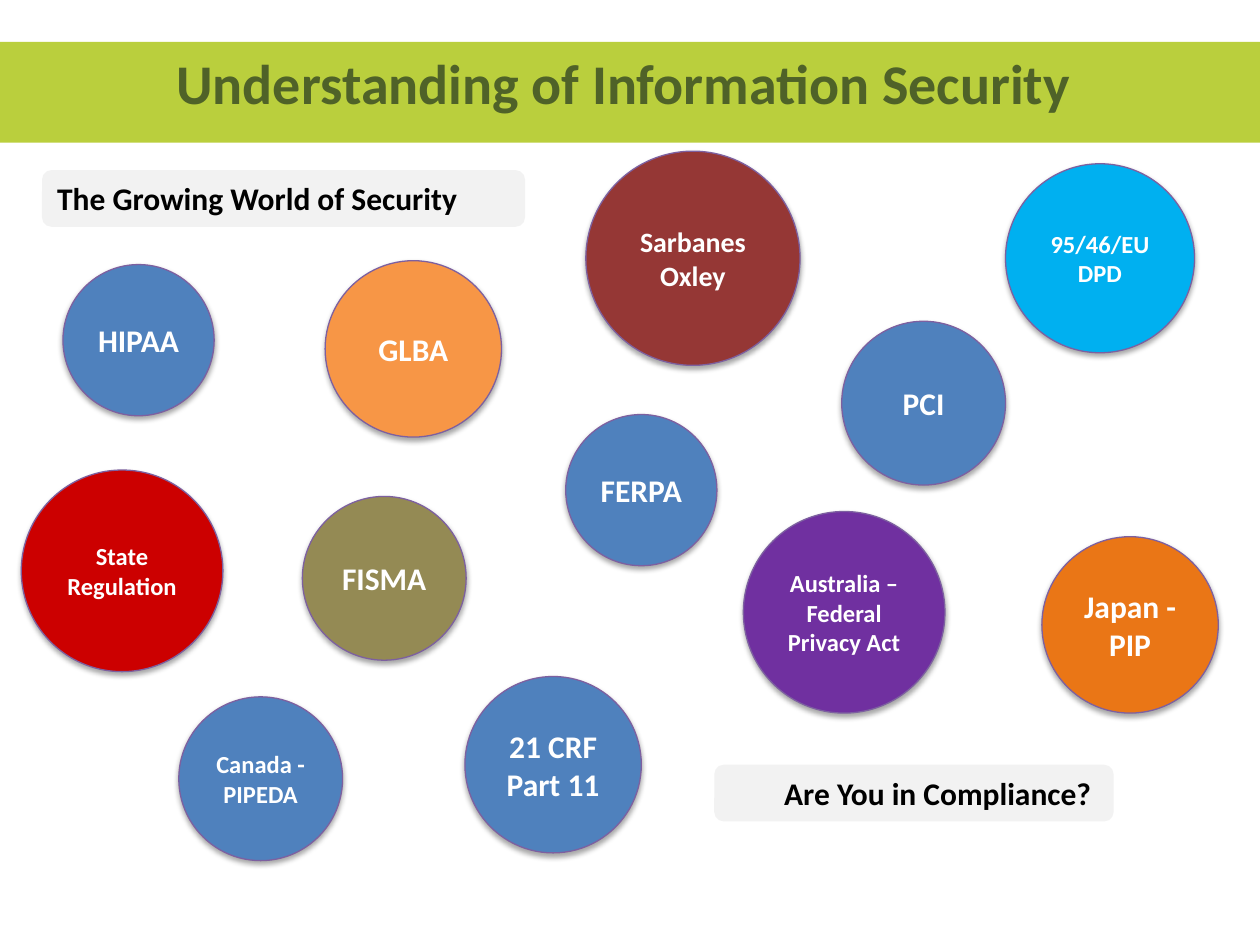
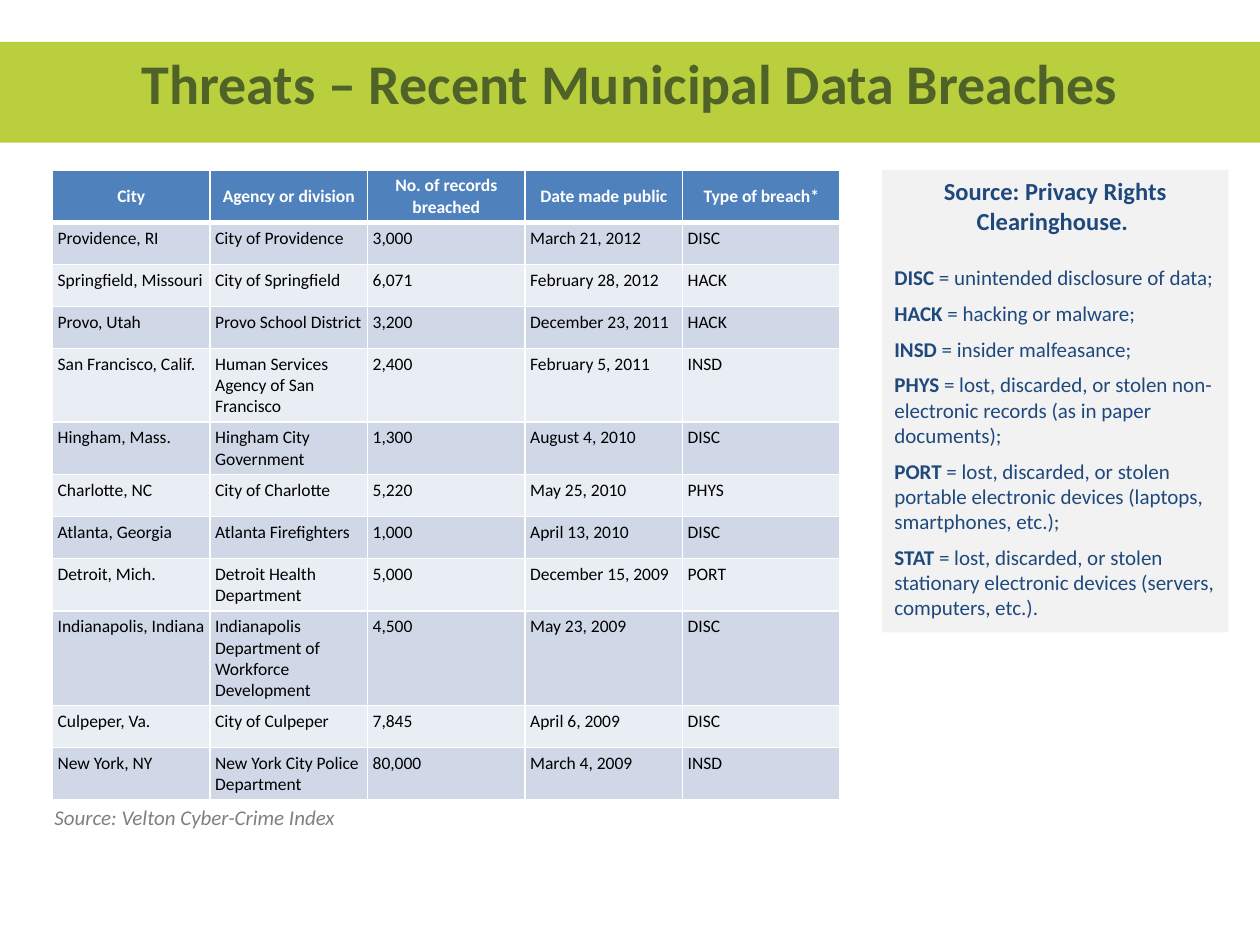
from dataclasses import dataclass

import pptx
import pptx.dml.color
import pptx.enum.shapes
import pptx.enum.text
import pptx.oxml
import pptx.oxml.ns
import pptx.util
from lxml import etree

FONT = "Calibri"
BAND, TITLE, PANEL = "BACF3D", "4F6228", "F2F2F2"
BLUE, NAVY, OUTLINE = "4F81BD", "1F497D", "7D60A0"
WHITE, BLACK, GREY = "FFFFFF", "000000", "808080"
ROW_FILLS = ("D0D8E8", "E9EDF4")

Pt = pptx.util.Pt
Shape = pptx.enum.shapes.MSO_SHAPE
Align = pptx.enum.text.PP_ALIGN
Anchor = pptx.enum.text.MSO_ANCHOR
qn = pptx.oxml.ns.qn


@dataclass
class Circle:
    text: str
    left: float
    top: float
    diameter: float
    fill: str = BLUE
    size: int = 18


@dataclass
class Label:
    text: str
    left: float
    top: float
    width: float
    align: Align = Align.LEFT


CIRCLES = [
    Circle("HIPAA", 36, 151.2, 86.4),
    Circle("PCI", 481, 183.6, 93.6),
    Circle("FISMA", 172.8, 283.7, 93.6, "948A54"),
    Circle("FERPA", 323.3, 236.9, 86.4),
    Circle("GLBA", 185.8, 149, 100.8, "F79646"),
    Circle("State Regulation", 12.2, 268.6, 115.2, "CC0000", 14),
    Circle("Sarbanes Oxley", 334.8, 86.4, 122.4, "953735", 16),
    Circle("21 CRF Part 11", 265.7, 386.6, 100.8),
    Circle("Japan - PIP", 595.4, 306.7, 100.8, "EA7616"),
    Circle("95/46/EU DPD", 574.6, 93.6, 108, "00B0F0", 14),
    Circle("Canada - PIPEDA", 102.2, 398.2, 93.6, BLUE, 14),
    Circle("Australia – Federal Privacy Act", 424.8, 292.3, 115.2, "7030A0", 14),
]

LABELS = [
    Label("The Growing World of Security", 24, 97.2, 276),
    Label("Are You in Compliance? ", 408.2, 437, 228.2, Align.RIGHT),
]

BREACHES = [
    ("City", "Agency or division", "No. of records breached", "Date made public", "Type of breach*"),
    ("Providence, RI", "City of Providence", "3,000", "March 21, 2012", "DISC"),
    ("Springfield, Missouri", "City of Springfield", "6,071", "February 28, 2012", "HACK"),
    ("Provo, Utah", "Provo School District", "3,200", "December 23, 2011", "HACK"),
    ("San Francisco, Calif.", "Human Services Agency of San Francisco", "2,400", "February 5, 2011", "INSD"),
    ("Hingham, Mass.", "Hingham City Government", "1,300", "August 4, 2010", "DISC"),
    ("Charlotte, NC", "City of Charlotte", "5,220", "May 25, 2010", "PHYS"),
    ("Atlanta, Georgia", "Atlanta Firefighters", "1,000", "April 13, 2010", "DISC"),
    ("Detroit, Mich.", "Detroit Health Department", "5,000", "December 15, 2009", "PORT"),
    ("Indianapolis, Indiana", "Indianapolis Department of Workforce Development", "4,500", "May 23, 2009", "DISC"),
    ("Culpeper, Va.", "City of Culpeper", "7,845", "April 6, 2009", "DISC"),
    ("New York, NY", "New York City Police Department", "80,000", "March 4, 2009", "INSD"),
]
ROW_HEIGHTS = (30, 24, 24, 24, 42, 30, 24, 24, 30, 54, 24, 30)
COLUMN_WIDTH = 90

BREACH_TYPES = {
    "DISC": "unintended disclosure of data;",
    "HACK": "hacking or malware;",
    "INSD": "insider malfeasance;",
    "PHYS": "lost, discarded, or stolen non-electronic records (as in paper documents);",
    "PORT": "lost, discarded, or stolen portable electronic devices (laptops, smartphones, etc.);",
    "STAT": "lost, discarded, or stolen stationary electronic devices (servers, computers, etc.).",
}


def rgb(value: str) -> pptx.dml.color.RGBColor:
    return pptx.dml.color.RGBColor.from_string(value)


def style(p, size: float, color: str, bold: bool = False, align: Align = Align.LEFT) -> None:
    p.alignment = align
    p.font.name = FONT
    p.font.size = Pt(size)
    p.font.bold = bold
    p.font.color.rgb = rgb(color)


def add_box(s, kind: Shape, left: float, top: float, width: float, height: float, fill: str):
    """Add a flat, filled preset shape without outline, its text at the top."""
    sp = s.shapes.add_shape(kind, Pt(left), Pt(top), Pt(width), Pt(height))
    sp.shadow.inherit = False
    sp.fill.solid()
    sp.fill.fore_color.rgb = rgb(fill)
    sp.line.fill.background()
    sp.text_frame.word_wrap = True
    sp.text_frame.vertical_anchor = Anchor.TOP
    return sp


def add_soft_shadow(sp) -> None:
    effects = sp.element.spPr.find(qn("a:effectLst"))
    shadow = etree.SubElement(effects, qn("a:outerShdw"), blurRad=str(Pt(3.1)),
                              dist=str(Pt(1.8)), dir="5400000", rotWithShape="0")
    color = etree.SubElement(shadow, qn("a:srgbClr"), val=BLACK)
    etree.SubElement(color, qn("a:alpha"), val="35000")


def add_circle(s, circle: Circle) -> None:
    sp = add_box(s, Shape.FLOWCHART_CONNECTOR, circle.left, circle.top,
                 circle.diameter, circle.diameter, circle.fill)
    sp.line.color.rgb = rgb(OUTLINE)
    sp.line.width = Pt(0.75)
    add_soft_shadow(sp)
    tf = sp.text_frame
    tf.vertical_anchor = Anchor.MIDDLE
    tf.text = circle.text
    style(tf.paragraphs[0], circle.size, WHITE, True, Align.CENTER)


def add_label(s, label: Label) -> None:
    sp = add_box(s, Shape.ROUNDED_RECTANGLE, label.left, label.top, label.width, 32.4, PANEL)
    sp.text_frame.text = label.text
    style(sp.text_frame.paragraphs[0], 18, BLACK, True, label.align)


def add_titled_slide(prs, layout, title: str):
    s = prs.slides.add_slide(layout)
    sp = s.shapes.title
    sp.left, sp.top, sp.width, sp.height = Pt(36), Pt(24), Pt(648), Pt(90)
    tf = sp.text_frame
    tf.text = title
    tf.vertical_anchor = Anchor.TOP
    tf.auto_size = pptx.enum.text.MSO_AUTO_SIZE.NONE
    style(tf.paragraphs[0], 32, TITLE, True, Align.CENTER)
    return s


def move_band_to_layout(s, layout) -> None:
    """Draw the title band and hand it to the layout, behind everything."""
    band = add_box(s, Shape.RECTANGLE, 0, 24, 720, 57.6, BAND)
    layout.shapes.element.insert(2, band.element)


def set_borders(cell, bottom: float) -> None:
    tc_pr = cell._tc.get_or_add_tcPr()
    for side, width in (("L", 1), ("R", 1), ("T", 1), ("B", bottom)):
        line = etree.SubElement(tc_pr, qn(f"a:ln{side}"), w=str(Pt(width)))
        fill = etree.SubElement(line, qn("a:solidFill"))
        etree.SubElement(fill, qn("a:srgbClr"), val=WHITE)


def fill_cell(cell, text: str, row: int) -> None:
    header = row == 0
    cell.text = text
    cell.margin_left = cell.margin_right = cell.margin_top = cell.margin_bottom = Pt(3)
    cell.vertical_anchor = Anchor.MIDDLE if header else Anchor.TOP
    set_borders(cell, 3 if header else 1)
    cell.fill.solid()
    cell.fill.fore_color.rgb = rgb(BLUE if header else ROW_FILLS[(row - 1) % 2])
    style(cell.text_frame.paragraphs[0], 10, WHITE if header else BLACK, header,
          Align.CENTER if header else Align.LEFT)


def add_breach_table(s) -> None:
    columns = len(BREACHES[0])
    table = s.shapes.add_table(len(BREACHES), columns, Pt(30), Pt(97.2),
                               Pt(COLUMN_WIDTH * columns), Pt(sum(ROW_HEIGHTS))).table
    for column in table.columns:
        column.width = Pt(COLUMN_WIDTH)
    for i, (height, values) in enumerate(zip(ROW_HEIGHTS, BREACHES)):
        table.rows[i].height = Pt(height)
        for j, text in enumerate(values):
            fill_cell(table.cell(i, j), text, i)


def add_source_note(s) -> None:
    tf = s.shapes.add_textbox(Pt(24), Pt(456), Pt(179), Pt(21.6)).text_frame
    tf.text = "Source: Velton Cyber-Crime Index"
    p = tf.paragraphs[0]
    style(p, 12, GREY)
    p.font.italic = True


def add_breach_key(s) -> None:
    tf = add_box(s, Shape.RECTANGLE, 504, 97.2, 198, 264.2, PANEL).text_frame
    tf.text = "Source: Privacy Rights Clearinghouse. "
    p = tf.paragraphs[0]
    style(p, 14, NAVY, True, Align.CENTER)
    p.space_after = Pt(17)
    for code, meaning in BREACH_TYPES.items():
        p = tf.add_paragraph()
        style(p, 12, NAVY)
        p.space_after = Pt(6)
        r = p.add_run()
        r.text = code
        r.font.bold = True
        p.add_run().text = f" = {meaning}"


def main() -> None:
    prs = pptx.Presentation()
    prs.slide_width, prs.slide_height = Pt(720), Pt(540)
    layout = prs.slide_layouts.get_by_name("Title Only")

    s = add_titled_slide(prs, layout, "Understanding of Information Security ")
    move_band_to_layout(s, layout)
    for circle in CIRCLES:
        add_circle(s, circle)
    for label in LABELS:
        add_label(s, label)

    s = add_titled_slide(prs, layout, "Threats – Recent Municipal Data Breaches")
    add_source_note(s)
    add_breach_table(s)
    add_breach_key(s)
    prs.save("out.pptx")


if __name__ == "__main__":
    main()
